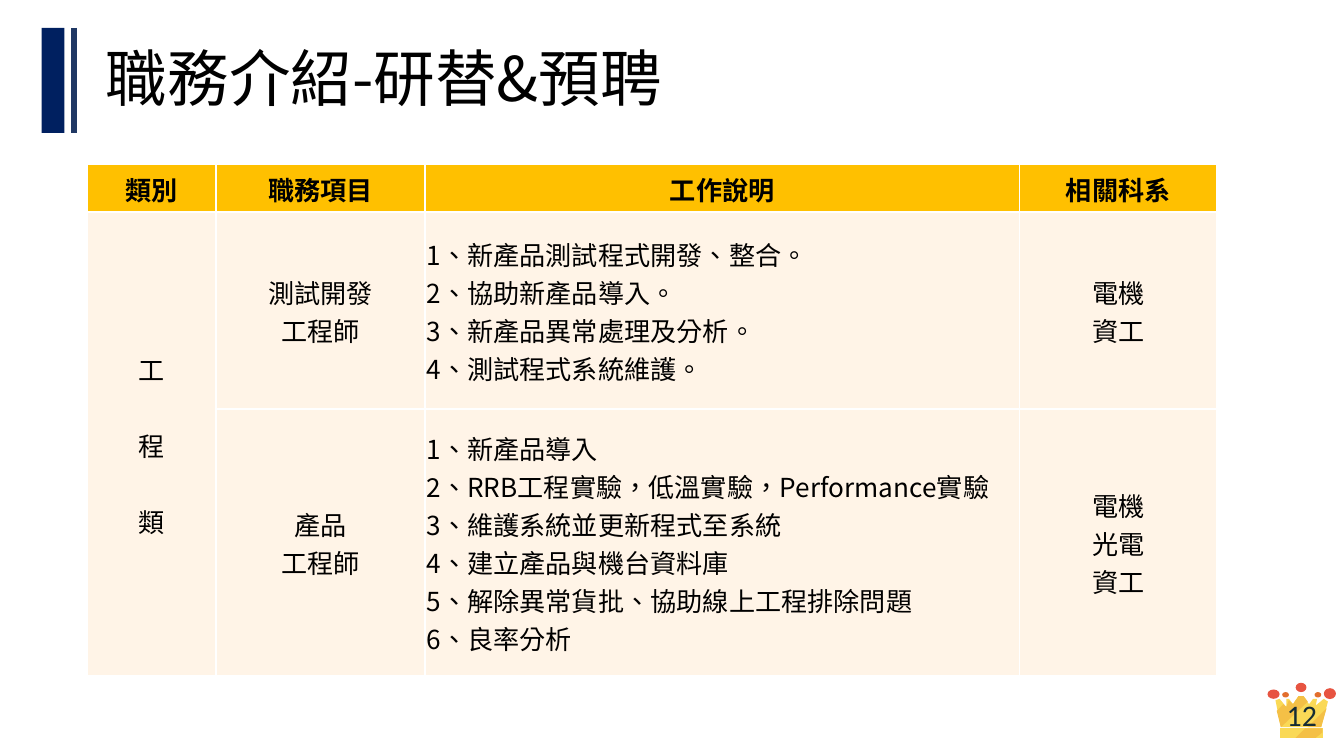
from lxml import etree
from pptx import Presentation
from pptx.dml.color import RGBColor
from pptx.enum import lang, shapes, text
from pptx.oxml.ns import qn
from pptx.util import Pt

COLORS = {
    "navy": "002060", "line": "203864", "black": "000000", "white": "FFFFFF",
    "header": "FFC000", "cell": "FFF4E7", "number": "152C34",
    "red": "E75441", "orange": "E26E2D", "gold": "FAD956", "shade": "F4C046",
}
CJK_FONT = "Noto Sans CJK SC"

HEADERS = ["類別", "職務項目", "工作說明", "相關科系"]
JOBS = [
    (["測試開發", "工程師"],
     ["新產品測試程式開發、整合。", "協助新產品導入。",
      "新產品異常處理及分析。", "測試程式系統維護。"],
     ["電機", "資工"]),
    (["產品", "工程師"],
     ["新產品導入", "RRB工程實驗，低溫實驗，Performance實驗",
      "維護系統並更新程式至系統", "建立產品與機台資料庫",
      "解除異常貨批、協助線上工程排除問題", "良率分析"],
     ["電機", "光電", "資工"]),
]
COLUMN_WIDTHS = [69, 112.2, 318.4, 105.8]
ROW_HEIGHTS = [25.4, 105.4, 143.2]

# Crown parts, in points from its top left corner
CROWN_BALLS = [
    ("orange", 7.9, 5, 3.6, 2.9), ("red", 15.1, 0, 5.8, 5),
    ("orange", 25.2, 5, 3.6, 2.9), ("red", 30.2, 2.9, 6.5, 5.8),
    ("red", 0, 3.6, 6.5, 5),
]
CROWN_OUTLINES = [
    ("gold", [(4.3, 9.4), (6.5, 8.6), (10.1, 13), (10.1, 8.6), (11.5, 8.6),
              (13.7, 11.5), (16.6, 7.2), (19.4, 7.2), (22.3, 11.5),
              (24.5, 8.6), (26.6, 8.6), (25.9, 12.2), (30.2, 8.6),
              (32.4, 10.1), (28.8, 23.8), (7.2, 23.8)]),
    ("shade", [(16.6, 7.2), (19.4, 7.2), (21.6, 10.1), (7.2, 23.8), (5, 15.1),
               (8.6, 11.5), (10.1, 13), (11.5, 9.4), (13.7, 11.5)]),
    ("shade", [(31.7, 13.7), (21.6, 23.8), (28.8, 23.8)]),
    ("gold", [(6.5, 24.5), (29.5, 24.5), (29.5, 29.5), (6.5, 29.5)]),
    ("shade", [(20.2, 24.5), (29.5, 24.5), (29.5, 26.6), (25.9, 29.5),
               (15.1, 29.5)]),
]


def rgb(name):
    return RGBColor.from_string(COLORS[name])


def paint(shape, color):
    shape.shadow.inherit = False
    shape.fill.solid()
    shape.fill.fore_color.rgb = rgb(color)
    shape.line.fill.background()


def write(frame, lines, size, color="black", font=CJK_FONT, bold=False,
          align=text.PP_ALIGN.LEFT, gap=0):
    """Fill a text frame with one paragraph a line, gap points apart."""
    frame.word_wrap = True
    for index, line in enumerate(lines):
        paragraph = frame.add_paragraph() if index else frame.paragraphs[0]
        run = paragraph.add_run()
        run.text = line
        run.font.language_id = lang.MSO_LANGUAGE_ID.TRADITIONAL_CHINESE
        paragraph.alignment = align
        if index and gap:
            paragraph.space_before = Pt(gap)
        paragraph.font.size = Pt(size)
        paragraph.font.bold = bold
        paragraph.font.color.rgb = rgb(color)
        paragraph.font.name = font
        defaults = paragraph._p.pPr.find(qn("a:defRPr"))
        etree.SubElement(defaults, qn("a:ea")).set("typeface", font)


def add_text_box(slide, left, top, width, height):
    frame = slide.shapes.add_textbox(
        Pt(left), Pt(top), Pt(width), Pt(height)).text_frame
    frame.vertical_anchor = text.MSO_ANCHOR.MIDDLE
    return frame


def add_title(slide, left, top, width, height):
    """Place the heading with its bar and line at the left."""
    bar = slide.shapes.add_shape(shapes.MSO_SHAPE.RECTANGLE,
                                 Pt(left), Pt(top), Pt(12.2), Pt(height))
    paint(bar, "navy")
    line_x = left + 17.3
    line = slide.shapes.add_connector(shapes.MSO_CONNECTOR.STRAIGHT, Pt(line_x),
                                      Pt(top), Pt(line_x), Pt(top + height))
    line.line.width = Pt(3)
    line.line.color.rgb = rgb("line")
    etree.SubElement(line._element.spPr, qn("a:effectLst"))
    indent = 27.4
    frame = add_text_box(slide, left + indent, top + 0.8, width - indent, height)
    write(frame, ["職務介紹-研替&預聘"], 33)
    frame.paragraphs[0].line_spacing = 0.9


def add_page_number(slide, left, top):
    """Place the crown and the page number on it."""
    for color, x, y, width, height in CROWN_BALLS:
        ball = slide.shapes.add_shape(shapes.MSO_SHAPE.OVAL, Pt(left + x),
                                      Pt(top + y), Pt(width), Pt(height))
        paint(ball, color)
    for color, points in CROWN_OUTLINES:
        corners = [(Pt(left + x), Pt(top + y)) for x, y in points]
        builder = slide.shapes.build_freeform(*corners[0])
        builder.add_line_segments(corners[1:])
        paint(builder.convert_to_shape(), color)
    frame = add_text_box(slide, left - 65.5, top + 6.4, 167.8, 21.6)
    write(frame, ["12"], 16, "number", "Calibri", align=text.PP_ALIGN.CENTER)


def style_cell(cell, color):
    cell.vertical_anchor = text.MSO_ANCHOR.MIDDLE
    cell.margin_left = cell.margin_right = cell.margin_top = Pt(0.7)
    cell.margin_bottom = 0
    properties = cell._tc.get_or_add_tcPr()
    for side in ("lnL", "lnR", "lnT", "lnB"):
        border = etree.SubElement(properties, qn(f"a:{side}"), w=str(Pt(1)))
        fill = etree.SubElement(border, qn("a:solidFill"))
        etree.SubElement(fill, qn("a:srgbClr"), val=COLORS["white"])
    cell.fill.solid()
    cell.fill.fore_color.rgb = rgb(color)


def add_job_table(slide, left, top):
    table = slide.shapes.add_table(
        len(ROW_HEIGHTS), len(COLUMN_WIDTHS), Pt(left), Pt(top),
        Pt(sum(COLUMN_WIDTHS)), Pt(sum(ROW_HEIGHTS))).table
    for column, width in zip(table.columns, COLUMN_WIDTHS):
        column.width = Pt(width)
    for index, (row, height) in enumerate(zip(table.rows, ROW_HEIGHTS)):
        row.height = Pt(height)
        for cell in row.cells:
            style_cell(cell, "cell" if index else "header")

    center = text.PP_ALIGN.CENTER
    for index, header in enumerate(HEADERS):
        write(table.cell(0, index).text_frame, [header], 14, bold=True,
              align=center)
    category = table.cell(1, 0)
    category.merge(table.cell(2, 0))
    write(category.text_frame, "工程類", 14, align=center, gap=20.4)
    for index, (job, duties, departments) in enumerate(JOBS, 1):
        numbered = [f"{n}、{duty}" for n, duty in enumerate(duties, 1)]
        write(table.cell(index, 1).text_frame, job, 14, align=center)
        write(table.cell(index, 2).text_frame, numbered, 14)
        write(table.cell(index, 3).text_frame, departments, 14, align=center)


def main():
    presentation = Presentation()
    presentation.slide_width, presentation.slide_height = Pt(720), Pt(405)
    slide = presentation.slides.add_slide(presentation.slide_layouts[6])
    add_title(slide, 22.3, 15, 648, 56.2)
    add_page_number(slide, 679, 365.8)
    add_job_table(slide, 46.6, 88.2)
    presentation.save("out.pptx")


if __name__ == "__main__":
    main()
